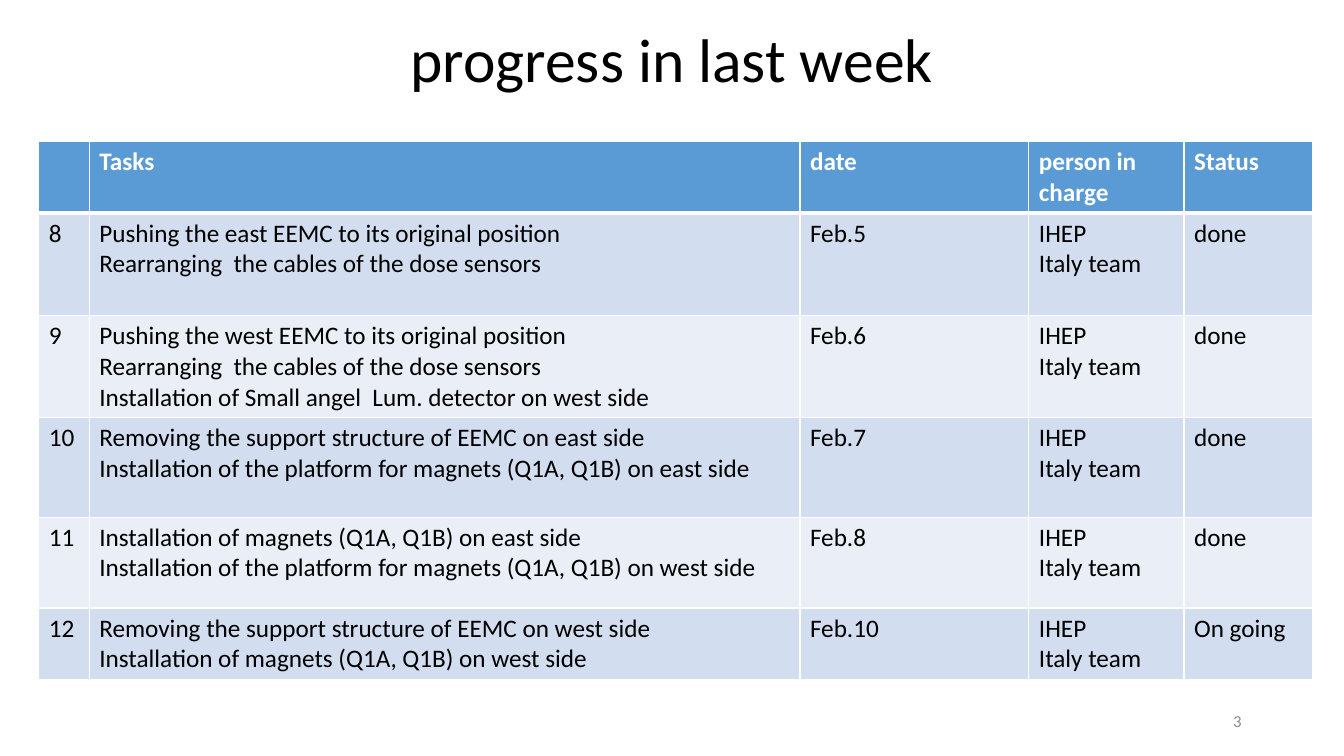
import dataclasses
import typing

import pptx
import pptx.dml.color
import pptx.enum.text
import pptx.oxml
import pptx.oxml.ns
import pptx.util

Cm = pptx.util.Cm
Align = pptx.enum.text.PP_ALIGN
Anchor = pptx.enum.text.MSO_ANCHOR


@dataclasses.dataclass(frozen=True)
class Theme:
    face: str = "Calibri"
    ink: str = "000000"
    white: str = "FFFFFF"
    gray: str = "8C8C8C"
    head: str = "5B9BD5"
    bands: tuple[str, str] = ("D2DEEF", "EAEFF7")
    title: int = 44
    body: int = 18
    foot: int = 12
    thin: int = 1
    thick: int = 3


@dataclasses.dataclass(frozen=True)
class Label:
    text: str
    left: float
    top: float
    width: float
    height: float
    size: int
    color: str
    align: Align
    lines: float = 1.0


@dataclasses.dataclass(frozen=True)
class Task:
    num: str
    work: str
    date: str
    state: str
    height: float


THEME = Theme()
TEAM = "IHEP\nItaly team"
HEADS = ("", "Tasks", "date", "person in charge", "Status")
WIDTHS = (1.27, 17.91, 5.77, 3.91, 3.25)
HEAD_HEIGHT = 1.8
CABLES = "Rearranging  the cables of the dose sensors"
TASKS = (
    Task("8", f"Pushing the east EEMC to its original position\n{CABLES}", "Feb.5", "done", 2.58),
    Task("9", f"Pushing the west EEMC to its original position\n{CABLES}\n"
         "Installation of Small angel  Lum. detector on west side", "Feb.6", "done", 2.58),
    Task("10", "Removing the support structure of EEMC on east side\n"
         "Installation of the platform for magnets (Q1A, Q1B) on east side", "Feb.7", "done", 2.5),
    Task("11", "Installation of magnets (Q1A, Q1B) on east side\n"
         "Installation of the platform for magnets (Q1A, Q1B) on west side", "Feb.8", "done", 2.29),
    Task("12", "Removing the support structure of EEMC on west side\n"
         "Installation of magnets (Q1A, Q1B) on west side", "Feb.10", "On going", 1.8),
)
LABELS = (
    Label("progress in last week", 2.33, 0.48, 29.21, 2.18,
          THEME.title, THEME.ink, Align.CENTER, 0.9),
    Label("3", 23.92, 17.65, 7.62, 1.02, THEME.foot, THEME.gray, Align.RIGHT),
)


def style(frame: typing.Any, size: int, color: str, bold: bool = False) -> None:
    looks = {"name": THEME.face, "size": pptx.util.Pt(size), "bold": bold}
    for para in frame.paragraphs:
        for key, value in looks.items():
            setattr(para.font, key, value)
        para.font.color.rgb = pptx.dml.color.RGBColor.from_string(color)


def add_label(slide: typing.Any, label: Label) -> None:
    sides = (label.left, label.top, label.width, label.height)
    frame = slide.shapes.add_textbox(*map(Cm, sides)).text_frame
    for key, value in {"word_wrap": True, "vertical_anchor": Anchor.MIDDLE,
                       "text": label.text}.items():
        setattr(frame, key, value)
    for key, value in {"alignment": label.align, "line_spacing": label.lines}.items():
        setattr(frame.paragraphs[0], key, value)
    style(frame, label.size, label.color)


def add_edge(cell: typing.Any, side: str, width: int) -> None:
    space = pptx.oxml.ns.nsdecls("a")
    cell._tc.get_or_add_tcPr().append(pptx.oxml.parse_xml(
        f'<a:ln{side} {space} w="{pptx.util.Pt(width)}"><a:solidFill>'
        f'<a:srgbClr val="{THEME.white}"/></a:solidFill></a:ln{side}>'))


def fill_cell(cell: typing.Any, text: str, row: int) -> None:
    head = row == 0
    edges = {"L": THEME.thin, "R": THEME.thin,
             "T": THEME.thick if row == 1 else THEME.thin,
             "B": THEME.thick if head else THEME.thin}
    for side, width in edges.items():
        add_edge(cell, side, width)
    back = THEME.head if head else THEME.bands[(row - 1) % 2]
    cell.fill.solid()
    cell.fill.fore_color.rgb = pptx.dml.color.RGBColor.from_string(back)
    cell.text = text
    style(cell.text_frame, THEME.body, THEME.white if head else THEME.ink, head)


def add_tasks(slide: typing.Any) -> None:
    rows = [HEADS] + [(t.num, t.work, t.date, TEAM, t.state) for t in TASKS]
    heights = [HEAD_HEIGHT] + [t.height for t in TASKS]
    table = slide.shapes.add_table(len(rows), len(HEADS), Cm(0.98), Cm(3.57),
                                   Cm(sum(WIDTHS)), Cm(sum(heights))).table
    for col, width in zip(table.columns, WIDTHS):
        col.width = Cm(width)
    for row, (texts, height) in enumerate(zip(rows, heights)):
        table.rows[row].height = Cm(height)
        for col, text in enumerate(texts):
            fill_cell(table.cell(row, col), text, row)


def main() -> None:
    deck = pptx.Presentation()
    for key, value in {"slide_width": Cm(33.87), "slide_height": Cm(19.05)}.items():
        setattr(deck, key, value)
    slide = deck.slides.add_slide(deck.slide_layouts[6])
    for label in LABELS:
        add_label(slide, label)
    add_tasks(slide)
    deck.save("out.pptx")


if __name__ == "__main__":
    main()
